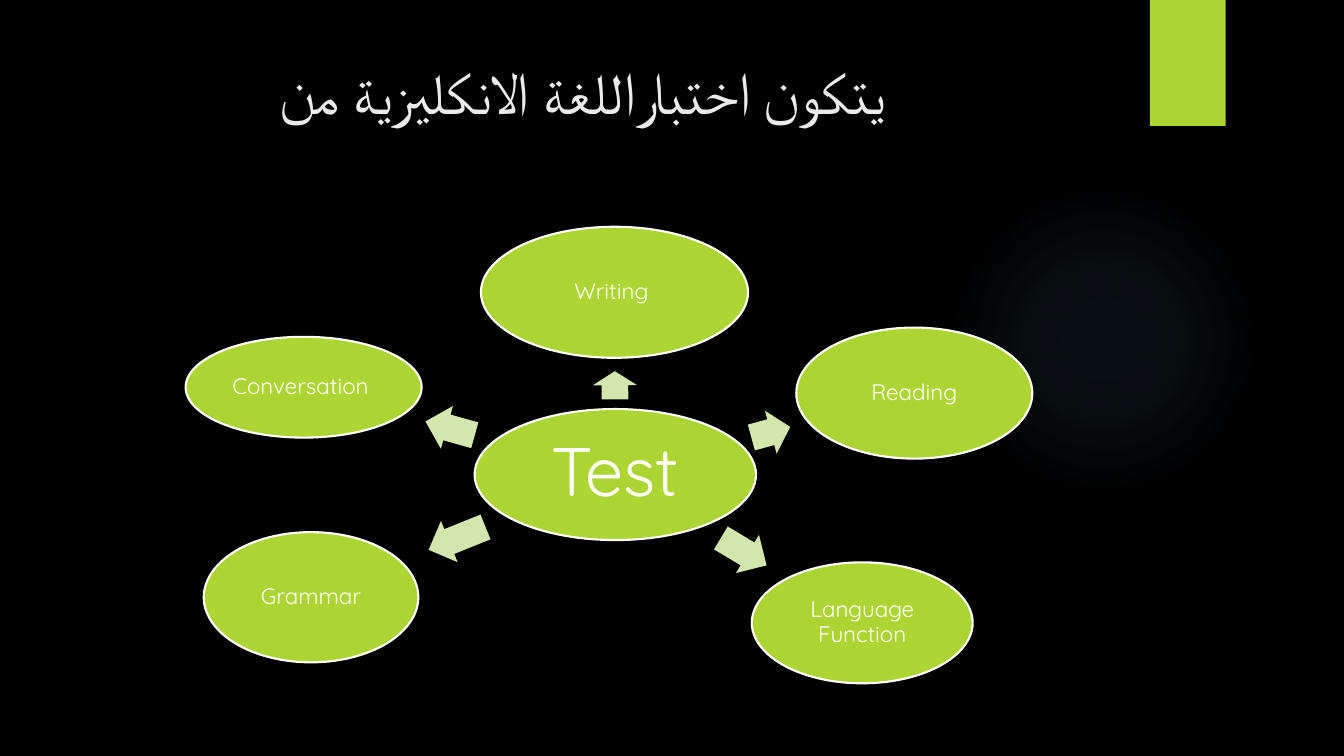
from dataclasses import dataclass
from math import atan2, degrees

from lxml.etree import SubElement
from pptx import Presentation
from pptx.dml.color import RGBColor
from pptx.enum.shapes import MSO_SHAPE
from pptx.enum.text import MSO_ANCHOR, MSO_AUTO_SIZE, PP_ALIGN
from pptx.oxml.ns import qn
from pptx.util import Inches, Pt


@dataclass(frozen=True)
class Theme:
    font: str = "Quicksand"
    background: str = "000000"
    lime: str = "ACD433"
    pale: str = "D2E6AE"
    glow: str = "7AC4F0"
    white: str = "FFFFFF"
    title_color: str = "EBEBEB"
    title_size: int = 42
    hub_size: int = 49
    topic_size: int = 16
    outline: float = 1.5
    hub_inset: float = 0.07
    topic_inset: float = 0.02


class Canvas:
    COLUMNS, ROWS = 32, 18

    def __init__(self, deck, theme):
        self.theme = theme
        self.column = deck.slide_width / self.COLUMNS
        self.row = deck.slide_height / self.ROWS
        self.page = deck.slides.add_slide(deck.slide_layouts[5])
        fill = self.page.background.fill
        fill.solid()
        fill.fore_color.rgb = RGBColor.from_string(theme.background)

    def place(self, left, top, width, height):
        return (round(left * self.column), round(top * self.row),
                round(width * self.column), round(height * self.row))

    def fill_text(self, frame, text, size, color):
        frame.text = text
        frame.word_wrap = True
        para = frame.paragraphs[0]
        para.alignment = PP_ALIGN.CENTER
        for span in para.runs:
            span.font.name = self.theme.font
            span.font.size = Pt(size)
            span.font.color.rgb = RGBColor.from_string(color)
        return para

    def title(self, text, area):
        box = self.page.shapes.title
        box.left, box.top, box.width, box.height = self.place(*area)
        self.fill_text(box.text_frame, text, self.theme.title_size, self.theme.title_color)
        box.text_frame.auto_size = MSO_AUTO_SIZE.NONE
        box.text_frame.vertical_anchor = MSO_ANCHOR.TOP

    def shape(self, kind, area, color):
        box = self.page.shapes.add_shape(kind, *self.place(*area))
        box.shadow.inherit = False
        box.fill.solid()
        box.fill.fore_color.rgb = RGBColor.from_string(color)
        box.line.fill.background()
        return box

    def glow(self, area, stops):
        box = self.shape(MSO_SHAPE.OVAL, area, self.theme.glow)
        solid = box.element.spPr.find(qn("a:solidFill"))
        gradient = solid.makeelement(qn("a:gradFill"), {"rotWithShape": "1"})
        solid.getparent().replace(solid, gradient)
        stop_list = SubElement(gradient, qn("a:gsLst"))
        for position, alpha in stops:
            stop = SubElement(stop_list, qn("a:gs"), pos=str(position * 1000))
            color = SubElement(stop, qn("a:srgbClr"), val=self.theme.glow)
            SubElement(color, qn("a:alpha"), val=str(alpha * 1000))
        circle = SubElement(gradient, qn("a:path"), path="circle")
        SubElement(circle, qn("a:fillToRect"), l="50000", t="50000", r="50000", b="50000")

    def bubble(self, text, area, size, inset):
        box = self.shape(MSO_SHAPE.OVAL, area, self.theme.lime)
        box.line.color.rgb = RGBColor.from_string(self.theme.white)
        box.line.width = Pt(self.theme.outline)
        frame = box.text_frame
        frame.margin_left = frame.margin_right = Inches(inset)
        frame.margin_top = frame.margin_bottom = Inches(inset)
        frame.vertical_anchor = MSO_ANCHOR.MIDDLE
        self.fill_text(frame, text, size, self.theme.white).line_spacing = 0.9

    def arrow(self, start, end, share, length, thickness=1.06):
        (start_x, start_y), (end_x, end_y) = [
            (left + width / 2, top + height / 2) for left, top, width, height in (start, end)]
        run, rise = end_x - start_x, end_y - start_y
        area = (start_x + share * run - length / 2,
                start_y + share * rise - thickness / 2, length, thickness)
        box = self.shape(MSO_SHAPE.RIGHT_ARROW, area, self.theme.pale)
        box.adjustments[0] = 0.6
        box.adjustments[1] = 0.5
        box.rotation = degrees(atan2(rise, run)) % 360


HUB = (11.3, 9.74, 6.7, 3.12)
TOPICS = [
    ("Writing ", (11.45, 5.4, 6.36, 3.12), 0.49, 0.67),
    ("Reading", (18.96, 7.8, 5.62, 3.12), 0.52, 0.96),
    ("Language Function", (17.9, 13.39, 5.26, 2.88), 0.52, 1.27),
    ("Grammar", (4.85, 12.67, 5.11, 3.1), 0.52, 1.46),
    ("Conversation ", (4.42, 8.02, 5.62, 2.4), 0.53, 1.22),
]


def main():
    deck = Presentation()
    deck.slide_width, deck.slide_height = Inches(13.33), Inches(7.5)
    theme = Theme()
    canvas = Canvas(deck, theme)
    canvas.glow((22.58, 4.39, 7.39, 7.39), [(0, 7), (36, 6), (69, 0), (100, 0)])
    canvas.shape(MSO_SHAPE.RECTANGLE, (27.38, 0, 1.8, 3), theme.lime)
    canvas.title("يتكون اختباراللغة الانكليزية من ", (1.7, 1.2, 24.7, 3.67))
    canvas.bubble("Test", HUB, theme.hub_size, theme.hub_inset)
    for text, area, share, length in TOPICS:
        canvas.arrow(HUB, area, share, length)
        canvas.bubble(text, area, theme.topic_size, theme.topic_inset)
    deck.save("out.pptx")


if __name__ == "__main__":
    main()
